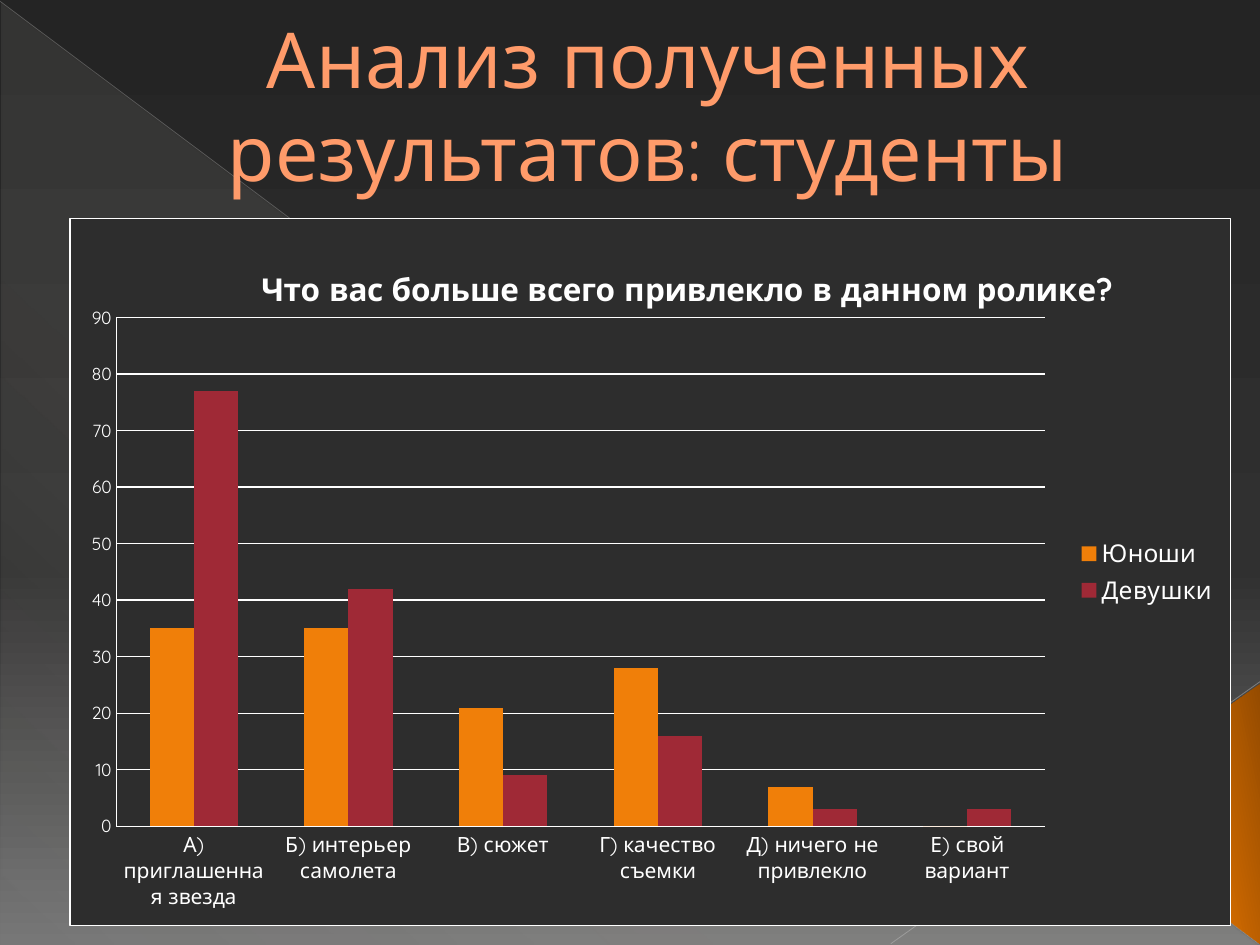
"""Build a slide with a clustered column chart of students' answers."""
from lxml.etree import SubElement
from pptx import Presentation
from pptx.chart.data import CategoryChartData
from pptx.enum.chart import XL_CHART_TYPE, XL_LEGEND_POSITION, XL_TICK_MARK
from pptx.enum.shapes import MSO_CONNECTOR, MSO_SHAPE
from pptx.enum.text import MSO_ANCHOR, PP_ALIGN
from pptx.oxml import parse_xml
from pptx.oxml.ns import nsdecls, qn
from pptx.util import Inches, Pt

FONT = "Quicksand"
WHITE = "FFFFFF"
cell = Inches(0.01)
columns, rows = 1000, 750


def make_fill(*stops, angle=0):
    """Return a solid fill for one (position, colour, opacity) stop, or a gradient for more."""
    colors = [
        f'<a:srgbClr val="{color}"><a:alpha val="{opacity * 1000}"/></a:srgbClr>'
        for position, color, opacity in stops
    ]
    if len(stops) == 1:
        return parse_xml(f'<a:solidFill {nsdecls("a")}>{colors[0]}</a:solidFill>')
    marks = "".join(
        f'<a:gs pos="{stop[0] * 1000}">{color}</a:gs>' for stop, color in zip(stops, colors)
    )
    return parse_xml(
        f'<a:gradFill {nsdecls("a")} rotWithShape="1"><a:gsLst>{marks}</a:gsLst>'
        f'<a:lin ang="{angle * 60000}" scaled="0"/></a:gradFill>'
    )


def write(paragraph, text, size=18, color=WHITE, bold=False, outline=None):
    """Add a run of text in the given format."""
    run = paragraph.add_run()
    run.text = text
    run.font.size = Pt(size)
    run.font.bold = bold
    properties = run.font._element
    if outline:
        line = SubElement(properties, qn("a:ln"), w=str(Pt(0.5)))
        line.append(make_fill((0, outline, 100)))
    properties.append(make_fill((0, color, 100)))
    run.font.name = FONT


presentation = Presentation()
presentation.slide_width = columns * cell
presentation.slide_height = rows * cell
slide = presentation.slides.add_slide(presentation.slide_layouts[6])

slide.background.fill.solid()
background = slide.background._cSld.bg.bgPr
background.replace(
    background[0],
    make_fill((0, "242424", 100), (60, "303030", 100), (100, "767676", 100), angle=90),
)

light = make_fill((0, "E3DED1", 10), (70, "E3DED1", 8), (100, "E3DED1", 1), angle=133)
orange = make_fill((0, "944B00", 100), (60, "F97F00", 100), (100, "FFAE8D", 100), angle=258)
triangles = [
    (MSO_SHAPE.RIGHT_TRIANGLE, (1, 2, 998, 748), 0, light),
    (MSO_SHAPE.ISOSCELES_TRIANGLE, (826, 575, 207, 142), 270, orange),
]
for kind, place, rotation, fill in triangles:
    shape = slide.shapes.add_shape(kind, *(length * cell for length in place))
    shape.rotation = rotation
    shape._element.spPr.append(fill)
    shape.line.fill.background()
    shape.shadow.inherit = False
shape.adjustments[0] = 0.51

edges = [
    ((0, 1, 999, 749), "B6B6B6", 0.39, 35),
    ((1000, 541, 707, 749), "BFBFBF", 0.47, 45),
]
for ends, color, weight, opacity in edges:
    connector = slide.shapes.add_connector(
        MSO_CONNECTOR.STRAIGHT, *(length * cell for length in ends)
    )
    connector.line.width = Pt(weight)
    properties = connector._element.spPr
    properties.find(qn("a:ln")).append(make_fill((0, color, opacity)))
    SubElement(properties, qn("a:effectLst"))

answers = CategoryChartData()
answers.categories = [
    "А) приглашенная звезда",
    "Б) интерьер самолета",
    "В) сюжет",
    "Г) качество съемки",
    "Д) ничего не привлекло",
    "Е) свой вариант",
]
answers.add_series("Юноши", (35, 35, 21, 28, 7, 0))
answers.add_series("Девушки", (77, 42, 9, 16, 3, 3))
frame = slide.shapes.add_chart(
    XL_CHART_TYPE.COLUMN_CLUSTERED, 55 * cell, 173 * cell, 922 * cell, 562 * cell, answers
)
chart = frame.chart
chart.font.size = Pt(10)
chart.font.name = FONT
chart.font.fill.solid()
chart.font._element.replace(chart.font._element.find(qn("a:solidFill")), make_fill((0, WHITE, 100)))

chart_format = parse_xml(f'<c:spPr {nsdecls("c", "a")}/>')
chart_format.append(make_fill((0, "2D2D2D", 100)))
SubElement(chart_format, qn("a:ln"), w=str(Pt(0.75))).append(make_fill((0, WHITE, 100)))
chart._chartSpace.find(qn("c:chart")).addnext(chart_format)

chart.has_title = True
write(
    chart.chart_title.text_frame.paragraphs[0],
    "Что вас больше всего привлекло в данном ролике?",
    bold=True,
)
chart.chart_title.include_in_layout = False
chart.has_legend = True
chart.legend.position = XL_LEGEND_POSITION.RIGHT
chart.legend.include_in_layout = False
chart.legend.font.size = Pt(14)

plot = chart.plots[0]
plot.gap_width = 150
plot.overlap = 0
plot.vary_by_categories = False
for series, color in zip(plot.series, ("F07F09", "9F2936")):
    series.invert_if_negative = False
    series.format.fill.solid()
    properties = series.format.fill._xPr
    properties.replace(properties.find(qn("a:solidFill")), make_fill((0, color, 100)))

values = chart.value_axis
values.minimum_scale, values.maximum_scale, values.major_unit = 0, 90, 10
values.has_major_gridlines = True
chart.category_axis.tick_labels.font.size = Pt(12)
for axis in (values, chart.category_axis):
    axis.major_tick_mark = axis.minor_tick_mark = XL_TICK_MARK.NONE
for part in (values, values.major_gridlines, chart.category_axis):
    part.format.line.width = Pt(0.75)
    part.format.line._ln.append(make_fill((0, WHITE, 100)))

layouts = [
    (chart.chart_title._element, {"x": 0.16, "y": 0.06}),
    (chart._chartSpace.chart.plotArea, {"x": 0.04, "y": 0.14, "w": 0.8, "h": 0.72}),
]
for element, shares in layouts:
    for old in element.findall(qn("c:layout")):
        element.remove(old)
    layout = parse_xml(f'<c:layout {nsdecls("c")}/>')
    manual = SubElement(layout, qn("c:manualLayout"))
    if "w" in shares:
        SubElement(manual, qn("c:layoutTarget"), val="inner")
    for side in ("x", "y"):
        SubElement(manual, qn(f"c:{side}Mode"), val="edge")
    for side, share in shares.items():
        SubElement(manual, qn(f"c:{side}"), val=str(share))
    text = element.find(qn("c:tx"))
    if text is None:
        element.insert(0, layout)
    else:
        text.addnext(layout)

title = slide.shapes.add_textbox(47 * cell, 0, 882 * cell, 161 * cell).text_frame
title.word_wrap = True
title.vertical_anchor = MSO_ANCHOR.BOTTOM
paragraph = title.paragraphs[0]
paragraph.alignment = PP_ALIGN.CENTER
paragraph._p.get_or_add_pPr().set("marL", str(53 * cell))
write(
    paragraph,
    "Анализ полученных результатов: студенты",
    size=44,
    color="FF9B6A",
    outline="A65806",
)

presentation.save("out.pptx")
